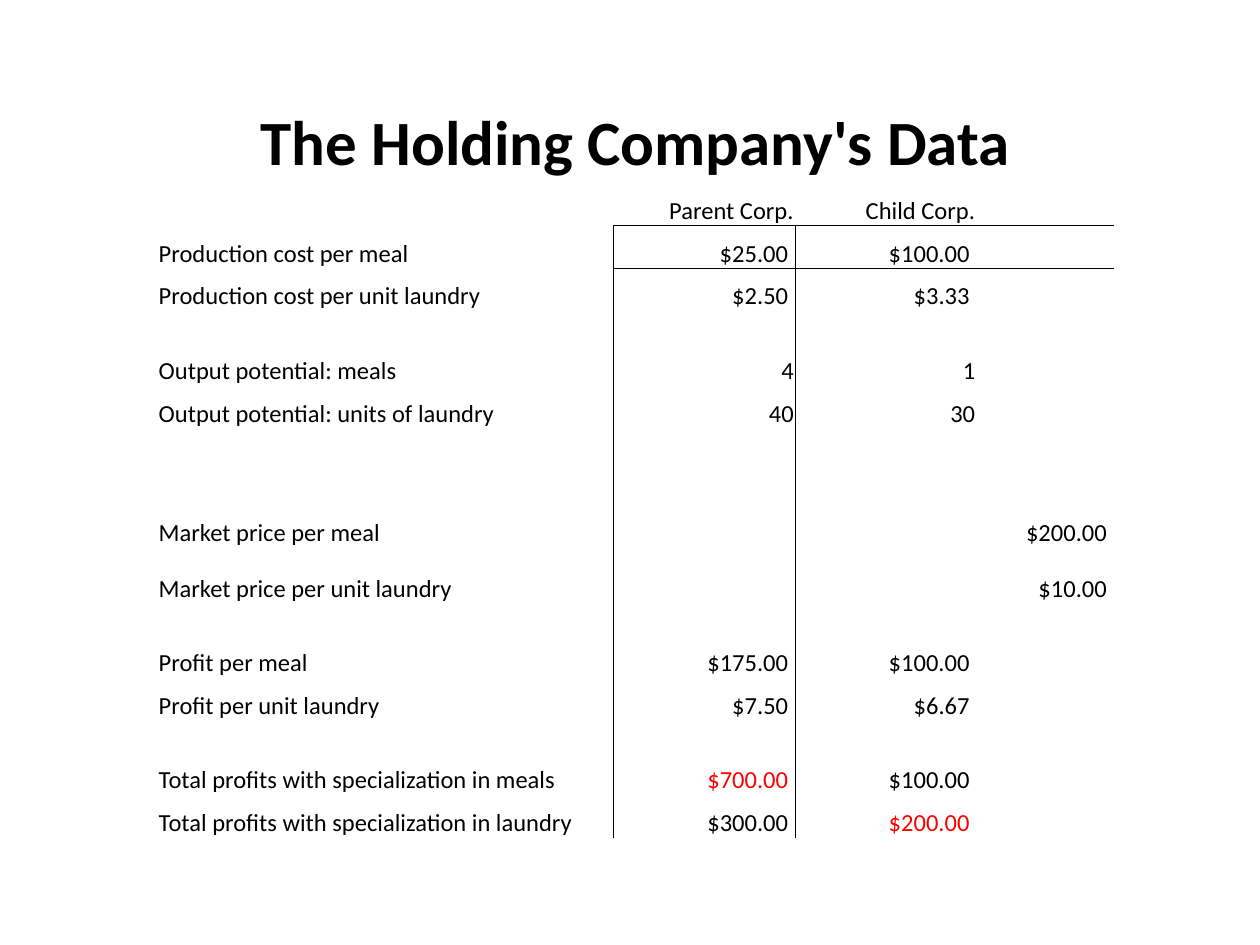
from dataclasses import dataclass

from lxml.etree import SubElement
from pptx import Presentation
from pptx.dml.color import RGBColor as RGB
from pptx.enum.text import MSO_ANCHOR as Anchor, PP_ALIGN as Align
from pptx.oxml.ns import qn
from pptx.util import Inches, Pt


@dataclass(frozen=True)
class Theme:
    """Colours, type sizes and line width of the slide."""
    font: str = "Calibri"
    ink: str = "000000"
    best: str = "FF0000"
    title: int = 36
    body: int = 14
    rule: float = 0.5


THEME = Theme()
PLAIN_STYLE = "{2D5ABB26-0587-4C30-8999-92F81FD0307C}"
LEFT, TOP = 1.25, 0.83
COLUMNS = (3.62, 1.44, 1.44, 1.09)
LINE, TALL, GAP, WIDE_GAP = 0.34, 0.44, 0.25, 0.26
TITLE_ROW, HEAD_ROW = 0, 1
BEST = {(15, 1), (16, 2)}
ROWS = (
    (0.61, "The Holding Company's Data"),
    (LINE, "", "Parent Corp.", "Child Corp."),
    (LINE, "Production cost per meal", "$25.00", "$100.00"),
    (LINE, "Production cost per unit laundry", "$2.50", "$3.33"),
    (GAP,),
    (LINE, "Output potential: meals", "4", "1"),
    (LINE, "Output potential: units of laundry", "40", "30"),
    (GAP,),
    (WIDE_GAP,),
    (TALL, "Market price per meal", "", "", "$200.00"),
    (TALL, "Market price per unit laundry", "", "", "$10.00"),
    (GAP,),
    (LINE, "Profit per meal", "$175.00", "$100.00"),
    (LINE, "Profit per unit laundry", "$7.50", "$6.67"),
    (GAP,),
    (LINE, "Total profits with specialization in meals", "$700.00", "$100.00"),
    (LINE, "Total profits with specialization in laundry", "$300.00", "$200.00"),
)


def write(cell, text, size=THEME.body, color=THEME.ink, bold=False,
          align=Align.LEFT, anchor=Anchor.BOTTOM):
    """Fill a cell with formatted text, keeping empty cells at the same size."""
    cell.margin_left = cell.margin_right = cell.margin_top = Inches(0.01)
    cell.margin_bottom = 0
    cell.vertical_anchor = anchor
    p = cell.text_frame.paragraphs[0]
    p.alignment = align
    if not text:
        SubElement(p._p, qn("a:endParaRPr"), sz=str(size * 100))
        return
    r = p.add_run()
    r.text = text
    r.font.name, r.font.size, r.font.bold = THEME.font, Pt(size), bold
    r.font.color.rgb = RGB.from_string(color)


def draw_borders(cell, sides):
    """Rule the given sides of a cell, named in the order L, R, T, B."""
    for side in sides:
        ln = SubElement(cell._tc.get_or_add_tcPr(), qn(f"a:ln{side}"),
                        w=str(Pt(THEME.rule)))
        fill = SubElement(ln, qn("a:solidFill"))
        SubElement(fill, qn("a:srgbClr"), val=THEME.ink)


def sides_for(row, col):
    """Return the ruled sides of the cell at a row and column."""
    if row == HEAD_ROW:
        return "B" if col else ""
    if row < HEAD_ROW:
        return ""
    beside_labels = {0: "R", 1: "L"}.get(col, "")
    return beside_labels + ("T" if col and row == HEAD_ROW + 1 else "")


def format_for(row, col):
    """Return the text format of the cell at a row and column."""
    if row == TITLE_ROW:
        size = THEME.body if col else THEME.title
        return dict(size=size, bold=True, align=Align.CENTER, anchor=Anchor.TOP)
    return dict(align=Align.RIGHT if col else Align.LEFT,
                color=THEME.best if (row, col) in BEST else THEME.ink)


def add_data_table(slide):
    """Add the table of costs, outputs, prices and profits."""
    heights = [row[0] for row in ROWS]
    frame = slide.shapes.add_table(
        len(ROWS), len(COLUMNS), Inches(LEFT), Inches(TOP),
        Inches(sum(COLUMNS)), Inches(sum(heights)))
    table = frame.table
    table.first_row = table.horz_banding = False
    table._tbl.tblPr.find(qn("a:tableStyleId")).text = PLAIN_STYLE
    for column, width in zip(table.columns, COLUMNS):
        column.width = Inches(width)
    for i, (height, *texts) in enumerate(ROWS):
        table.rows[i].height = Inches(height)
        for j in range(len(COLUMNS)):
            cell = table.cell(i, j)
            text = texts[j] if j < len(texts) else ""
            if text.startswith("$"):
                text = f" {text} "
            write(cell, text, **format_for(i, j))
            draw_borders(cell, sides_for(i, j))
            cell.fill.background()
    table.cell(TITLE_ROW, 0).merge(table.cell(TITLE_ROW, len(COLUMNS) - 1))


def main():
    """Build the slide and save it."""
    prs = Presentation()
    prs.slide_width, prs.slide_height = Inches(10), Inches(7.5)
    slide = prs.slides.add_slide(prs.slide_layouts[6])
    add_data_table(slide)
    prs.save("out.pptx")


if __name__ == "__main__":
    main()
